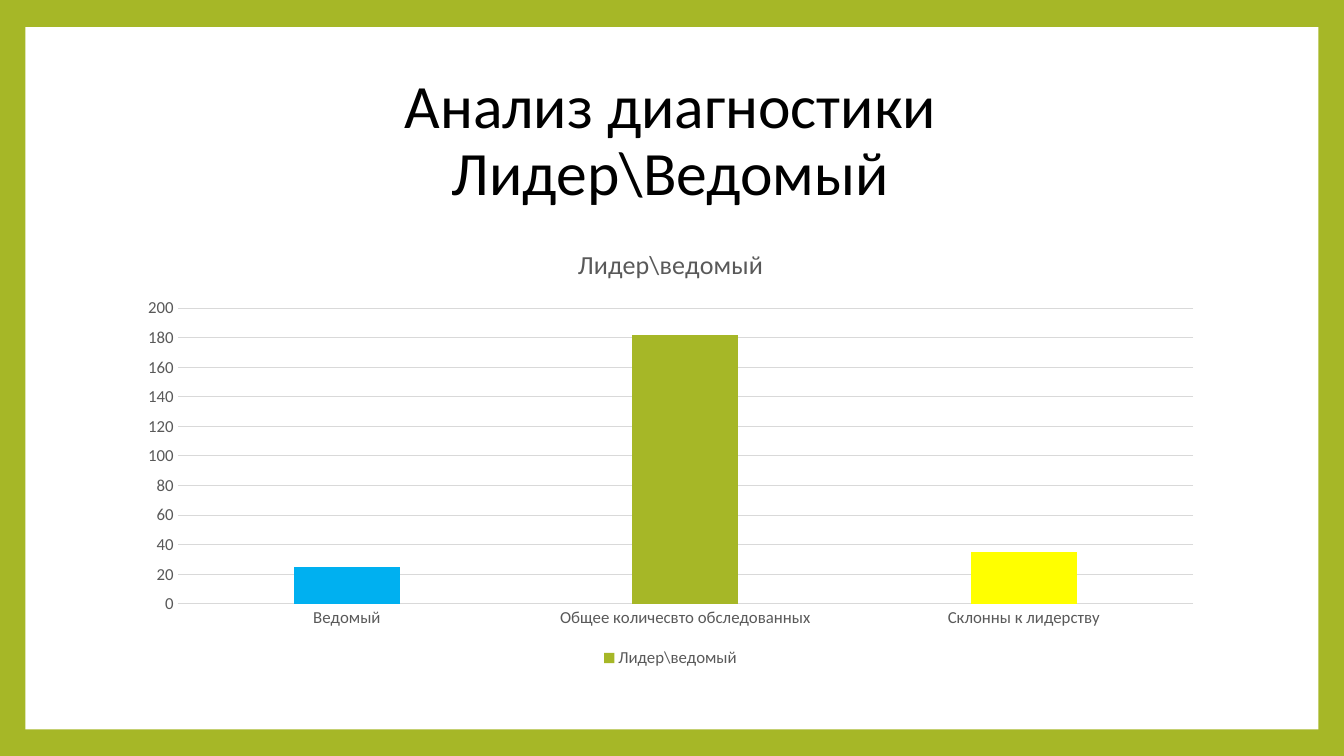
from pptx import Presentation
from pptx import util as u
from pptx.chart.data import CategoryChartData
from pptx.dml.color import RGBColor
from pptx.enum import chart as charts, shapes, text

COLOURS = {"olive": "A6B727", "white": "FFFFFF", "black": "000000", "grey": "595959",
           "rule": "D9D9D9", "blue": "00B0F0", "yellow": "FFFF00"}
WIDTH, HEIGHT = 13.33, 7.5
FONT = "Calibri"
SERIES = "Лидер\\ведомый"
RESULTS = [("Ведомый", 25, "blue"),
           ("Общее количесвто обследованных", 182, "olive"),
           ("Склонны к лидерству", 35, "yellow")]


def area(left, top, width, height):
    """Turn shares of the slide's size into lengths."""
    return [u.Inches(share * side) for share, side in
            zip((left, top, width, height), (WIDTH, HEIGHT, WIDTH, HEIGHT))]


def apply(target, **values):
    """Set each given format value on the target."""
    for name, value in values.items():
        setattr(target, name, value)


def paint(fill, colour):
    """Give a fill one solid colour."""
    fill.solid()
    fill.fore_color.rgb = RGBColor.from_string(COLOURS[colour])


def style_font(font, size, colour):
    """Set the face, size and colour of a font."""
    apply(font, name=FONT, size=u.Pt(size), bold=False)
    font.color.rgb = RGBColor.from_string(COLOURS[colour])


def style_line(line):
    """Draw a line as a thin pale rule."""
    paint(line.fill, "rule")
    line.width = u.Pt(0.75)


def add_panel(page):
    """Lay the white panel behind everything else."""
    panel = page.shapes.add_shape(shapes.MSO_SHAPE.RECTANGLE,
                                  *area(0.019, 0.036, 0.962, 0.929))
    panel.shadow.inherit = False
    paint(panel.fill, "white")
    panel.line.fill.background()
    page.shapes.title._element.addprevious(panel._element)


def add_title(page, words):
    """Place and format the slide title."""
    title = page.shapes.title
    left, top, width, height = area(0.094, 0.089, 0.81, 0.198)
    apply(title, left=left, top=top, width=width, height=height)
    box = title.text_frame
    apply(box, text=words, word_wrap=True, auto_size=text.MSO_AUTO_SIZE.NONE,
          vertical_anchor=text.MSO_ANCHOR.MIDDLE)
    para = box.paragraphs[0]
    apply(para, alignment=text.PP_ALIGN.CENTER, line_spacing=0.9)
    for span in para.runs:
        style_font(span.font, 44, "black")


def style_axes(chart):
    """Format the category and value axes."""
    for axis in (chart.category_axis, chart.value_axis):
        apply(axis, major_tick_mark=charts.XL_TICK_MARK.NONE,
              minor_tick_mark=charts.XL_TICK_MARK.NONE)
        style_font(axis.tick_labels.font, 12, "grey")
    style_line(chart.category_axis.format.line)
    apply(chart.value_axis, minimum_scale=0, maximum_scale=200, major_unit=20,
          has_major_gridlines=True)
    chart.value_axis.format.line.fill.background()
    style_line(chart.value_axis.major_gridlines.format.line)


def add_results_chart(page):
    """Add the column chart with one colour for each result."""
    names, values, colours = zip(*RESULTS)
    data = CategoryChartData()
    data.categories = names
    data.add_series(SERIES, values)
    frame = page.shapes.add_chart(charts.XL_CHART_TYPE.COLUMN_CLUSTERED,
                                  *area(0.094, 0.3, 0.81, 0.589), data)
    chart = frame.chart
    style_font(chart.font, 10, "black")
    heading = chart.chart_title.text_frame
    heading.text = SERIES
    style_font(heading.paragraphs[0].runs[0].font, 18.6, "grey")
    chart.has_legend = True
    apply(chart.legend, position=charts.XL_LEGEND_POSITION.BOTTOM, include_in_layout=False)
    style_font(chart.legend.font, 12, "grey")
    style_axes(chart)
    plot = chart.plots[0]
    apply(plot, gap_width=219, overlap=-27, vary_by_categories=False)
    series = plot.series[0]
    paint(series.format.fill, "olive")
    for index, colour in enumerate(colours):
        if colour != "olive":
            paint(series.points[index].format.fill, colour)


def main():
    """Build the slide and save the deck."""
    deck = Presentation()
    apply(deck, slide_width=u.Inches(WIDTH), slide_height=u.Inches(HEIGHT))
    page = deck.slides.add_slide(deck.slide_layouts.get_by_name("Title Only"))
    paint(page.background.fill, "olive")
    add_panel(page)
    add_title(page, "Анализ диагностики\vЛидер\\Ведомый")
    add_results_chart(page)
    deck.save("out.pptx")


if __name__ == "__main__":
    main()
